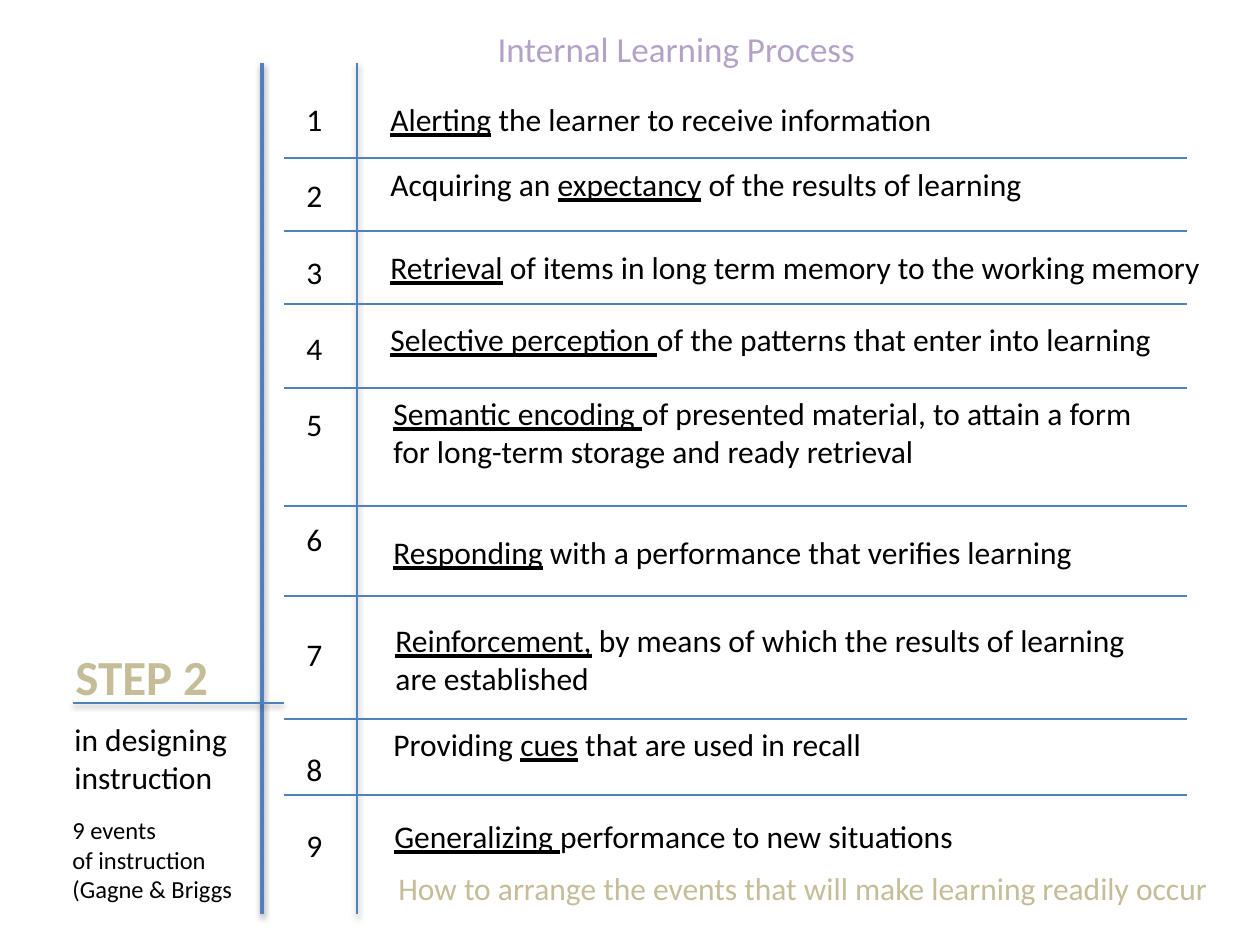
"""Build the slide on the internal learning process and its nine events."""
from dataclasses import dataclass

from pptx import Presentation
from pptx.dml.color import RGBColor
from pptx.enum.shapes import MSO_CONNECTOR
from pptx.enum.text import MSO_ANCHOR, MSO_AUTO_SIZE, PP_ALIGN
from pptx.util import Emu, Pt

STRAIGHT = MSO_CONNECTOR.STRAIGHT
TOP = MSO_ANCHOR.TOP
LEFT = PP_ALIGN.LEFT
GROW, FIXED = MSO_AUTO_SIZE.SHAPE_TO_FIT_TEXT, MSO_AUTO_SIZE.NONE
EMU_PER_PX = 914400 / 126
TITLE_ONLY = 5


@dataclass(frozen=True)
class Theme:
    font: str = "Calibri"
    ink: str = "000000"
    sand: str = "C4BD97"
    lilac: str = "B3A2C7"
    blue: str = "4F81BD"
    step: int = 28
    title: int = 20
    body: int = 18
    small: int = 14
    row: int = 22


T = Theme()
BODY = {"size": T.body, "color": T.ink}

TITLE = ("Internal Learning Process", (485, 21, 386, 55),
         {"size": T.title, "color": T.lilac})

LABELS = [
    ("STEP 2", (63, 640, 160, 72), {"size": T.step, "color": T.sand, "bold": True}),
    ("in designing\ninstruction", (62, 714, 180, 89), BODY),
    ("9 events\nof instruction\n(Gagne & Briggs", (60, 809, 186, 102),
     {"size": T.small, "color": T.ink}),
    ("How to arrange the events that will make learning readily occur",
     (386, 863, 843, 50), {"size": T.body, "color": T.sand}),
]

EVENTS = [
    ("", "Alerting", " the learner to receive information", (378, 94, 572, 50)),
    ("Acquiring an ", "expectancy", " of the results of learning", (378, 159, 663, 50)),
    ("", "Retrieval", " of items in long term memory to the working memory",
     (378, 242, 844, 50)),
    ("", "Selective perception ", "of the patterns that enter into learning",
     (378, 314, 794, 50)),
    ("", "Semantic encoding ", "of presented material, to attain a form\n"
     "for long-term storage and ready retrieval", (381, 388, 772, 89)),
    ("", "Responding", " with a performance that verifies learning", (381, 527, 711, 50)),
    ("", "Reinforcement,", " by means of which the results of learning\n"
     "are established", (383, 615, 762, 89)),
    ("Providing ", "cues", " that are used in recall", (381, 719, 498, 50)),
    ("", "Generalizing ", "performance to new situations", (382, 811, 590, 50)),
]

NUMBER_BOX = (294, 94, 42, 776)
ROWS_ABOVE = [0, 1, 1, 1, 1, 2, 2, 2, 1]

ROW_RULES = [158, 231, 304, 388, 506, 596, 719, 795]
LINES = [
    ((262, 63, 262, 914), 2),
    ((73, 703, 284, 703), 1),
    ((357, 63, 357, 914), 1),
] + [((284, y, 1187, y), 0.75) for y in ROW_RULES]


def px(*values):
    return [Emu(round(v * EMU_PER_PX)) for v in values]


def set_all(obj, values):
    for name, value in values.items():
        setattr(obj, name, value)


def add_run(p, text, fmt, underline=False):
    r = p.add_run()
    r.text = text
    set_all(r.font, {"name": T.font, "size": Pt(fmt["size"]),
                     "bold": fmt.get("bold", False), "underline": underline})
    r.font.color.rgb = RGBColor.from_string(fmt["color"])


def write(tf, parts, fmt):
    p = tf.paragraphs[0]
    for text, underline in parts:
        for i, line in enumerate(text.split("\n")):
            if i:
                p = tf.add_paragraph()
            if line:
                add_run(p, line, fmt, underline)


def add_text(slide, box, parts, fmt):
    tf = slide.shapes.add_textbox(*px(*box)).text_frame
    write(tf, parts, fmt)
    set_all(tf, {"word_wrap": False, "auto_size": GROW})
    return tf


def add_title(slide):
    text, box, fmt = TITLE
    sp = slide.shapes.title
    set_all(sp, dict(zip(("left", "top", "width", "height"), px(*box))))
    tf = sp.text_frame
    write(tf, [(text, False)], fmt)
    set_all(tf, {"word_wrap": False, "auto_size": FIXED, "vertical_anchor": TOP})
    tf.paragraphs[0].alignment = LEFT


def add_line(slide, ends, width):
    line = slide.shapes.add_connector(STRAIGHT, *px(*ends)).line
    line.color.rgb = RGBColor.from_string(T.blue)
    line.width = Pt(width)


def main():
    prs = Presentation()
    set_all(prs, dict(zip(("slide_width", "slide_height"), px(1260, 945))))
    slide = prs.slides.add_slide(prs.slide_layouts[TITLE_ONLY])

    add_title(slide)
    for ends, width in LINES:
        add_line(slide, ends, width)
    for text, box, fmt in LABELS:
        add_text(slide, box, [(text, False)], fmt)

    numbers = "\n".join(str(n) for n in range(1, len(EVENTS) + 1))
    tf = add_text(slide, NUMBER_BOX, [(numbers, False)], BODY)
    for p, rows in zip(tf.paragraphs, ROWS_ABOVE):
        p.space_before = Pt(rows * T.row)

    for before, key, after, box in EVENTS:
        add_text(slide, box, [(before, False), (key, True), (after, False)], BODY)

    prs.save("out.pptx")


if __name__ == "__main__":
    main()
